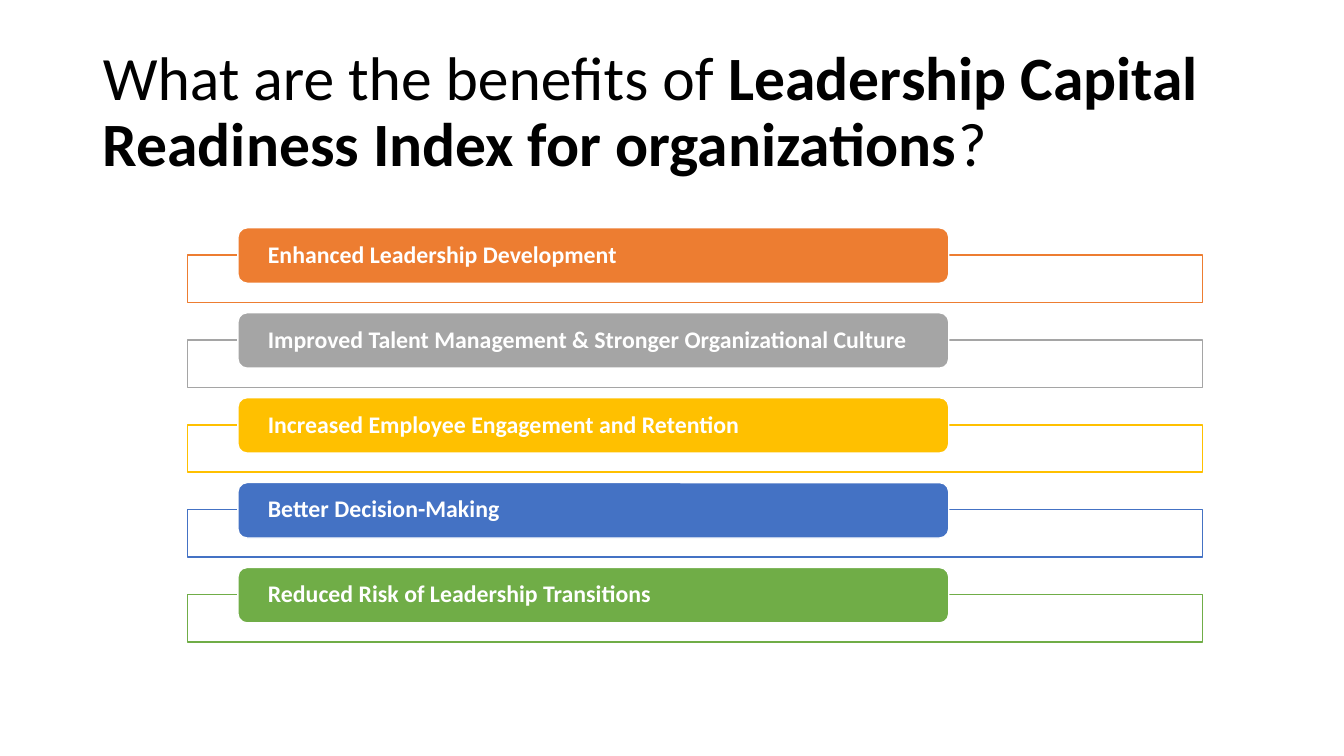
"""Build a slide listing five benefits as coloured, overlapping bars."""
from lxml import etree
from pptx import Presentation
from pptx import util as u
from pptx.dml.color import RGBColor
from pptx.enum import shapes, text
from pptx.oxml import ns


def paint(color_format, hex_color):
    color_format.rgb = RGBColor.from_string(hex_color)


def add_bar(slide, preset, box, fill, outline):
    bar = slide.shapes.add_shape(preset, *[u.Inches(length) for length in box])
    bar.shadow.inherit = False
    bar.fill.solid()
    paint(bar.fill.fore_color, fill)
    paint(bar.line.color, outline)
    bar.line.width = u.Pt(1)
    return bar


deck = Presentation()
deck.slide_width, deck.slide_height = u.Inches(13.33), u.Inches(7.5)
slide = deck.slides.add_slide(deck.slide_layouts[5])

heading = slide.shapes.title
heading.left, heading.top = u.Inches(0.92), u.Inches(0.4)
heading.width, heading.height = u.Inches(11.5), u.Inches(1.45)
heading.text_frame.auto_size = text.MSO_AUTO_SIZE.NONE
heading.text_frame.vertical_anchor = text.MSO_ANCHOR.MIDDLE
question = heading.text_frame.paragraphs[0]
question.alignment = text.PP_ALIGN.LEFT
question.line_spacing = 0.9
question.font.name = "Calibri"
question.font.size = u.Pt(44)
paint(question.font.color, "000000")
for wording, bold in [
    ("What are the benefits of ", False),
    ("Leadership Capital Readiness Index for organizations", True),
    ("?", False),
]:
    part = question.add_run()
    part.text = wording
    part.font.bold = bold

benefits = [
    ("Enhanced Leadership Development", "ED7D31"),
    ("Improved Talent Management & Stronger Organizational Culture", "A5A5A5"),
    ("Increased Employee Engagement and Retention", "FFC000"),
    ("Better Decision-Making", "4472C4"),
    ("Reduced Risk of Leadership Transitions", "70AD47"),
]
first_top, last_top = 2.26, 5.63
row_pitch = (last_top - first_top) / (len(benefits) - 1)

for row, (benefit, accent) in enumerate(benefits):
    top = first_top + row * row_pitch
    frame = add_bar(slide, shapes.MSO_SHAPE.RECTANGLE,
                    (1.86, top + 0.27, 10.07, 0.47), "FFFFFF", accent)
    white = frame.fill._xPr.find(".//" + ns.qn("a:srgbClr"))
    etree.SubElement(white, ns.qn("a:alpha"), val="90000")

    label = add_bar(slide, shapes.MSO_SHAPE.ROUNDED_RECTANGLE,
                    (2.36, top, 7.05, 0.55), accent, "FFFFFF").text_frame
    label.margin_left = label.margin_right = u.Inches(0.27)
    label.margin_top = label.margin_bottom = 0
    label.vertical_anchor = text.MSO_ANCHOR.MIDDLE
    caption = label.paragraphs[0]
    caption.text = benefit
    caption.alignment = text.PP_ALIGN.LEFT
    caption.line_spacing = 0.9
    caption.font.name = "Calibri"
    caption.font.size = u.Pt(17)
    caption.font.bold = True
    paint(caption.font.color, "FFFFFF")

deck.save("out.pptx")
